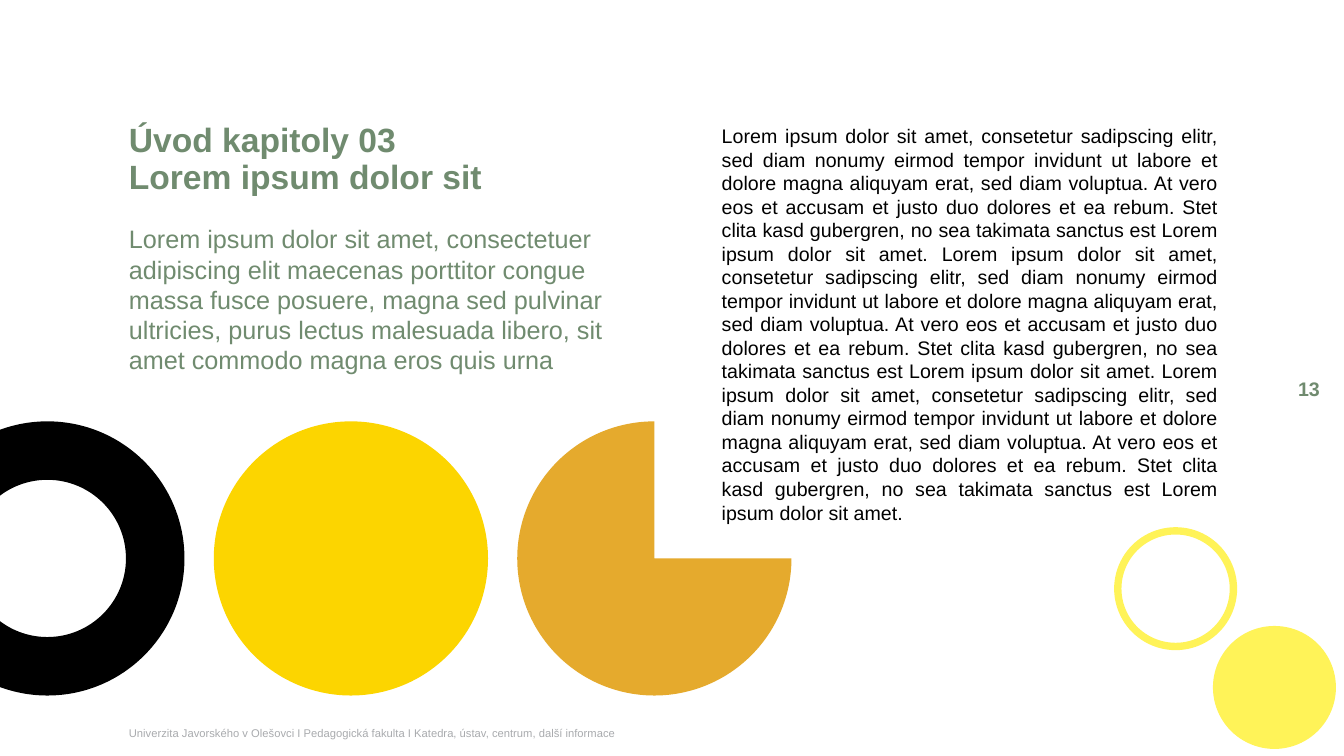
from itertools import pairwise
from math import acos, cos, pi, sin, tan

from pptx import Presentation
from pptx.dml.color import RGBColor
from pptx.enum.shapes import MSO_SHAPE
from pptx.enum.text import MSO_ANCHOR, PP_ALIGN
from pptx.oxml.ns import qn
from pptx.oxml.xmlchemy import OxmlElement
from pptx.util import Inches, Pt

BLACK = RGBColor(0x00, 0x00, 0x00)
GREEN = RGBColor(0x70, 0x8B, 0x6F)
GREY = RGBColor(0xA9, 0xAB, 0xAE)
YELLOW = RGBColor(0xFC, 0xD5, 0x00)
OCHRE = RGBColor(0xE5, 0xAA, 0x2D)
LEMON = RGBColor(0xFF, 0xF3, 0x58)

TITLE = "Úvod kapitoly 03\vLorem ipsum dolor sit"
LEAD = (
    "Lorem ipsum dolor sit amet, consectetuer adipiscing elit maecenas "
    "porttitor congue massa fusce posuere, magna sed pulvinar ultricies, "
    "purus lectus malesuada libero, sit amet commodo magna eros quis urna"
)
PASSAGE = (
    "Lorem ipsum dolor sit amet, consetetur sadipscing elitr, sed diam nonumy "
    "eirmod tempor invidunt ut labore et dolore magna aliquyam erat, sed diam "
    "voluptua. At vero eos et accusam et justo duo dolores et ea rebum. Stet "
    "clita kasd gubergren, no sea takimata sanctus est Lorem ipsum dolor sit amet."
)
FOOTER = (
    "Univerzita Javorského v Olešovci I Pedagogická fakulta I "
    "Katedra, ústav, centrum, další informace"
)


def add_text(page, box, text, font, paragraph=None, frame=None):
    text_frame = page.shapes.add_textbox(*map(Inches, box)).text_frame
    para = text_frame.paragraphs[0]
    para.text = text
    color = font.pop("color")
    for target, values in (
        (text_frame, {"word_wrap": True, **(frame or {})}),
        (para, paragraph or {}),
        (para.font, {"name": "Arial", **font}),
    ):
        for name, value in values.items():
            setattr(target, name, value)
    para.font.color.rgb = color


def paint(shape, color):
    shape.shadow.inherit = False
    shape.fill.solid()
    shape.fill.fore_color.rgb = color
    shape.line.fill.background()


def add_round(group, kind, left, top, size, color):
    shape = group.shapes.add_shape(kind, *map(Inches, (left, top, size, size)))
    paint(shape, color)
    return shape


def clipped_arc(center_x, center_y, radius):
    def place(angle, pull=0):
        return (
            Inches(center_x + radius * (cos(angle) - pull * sin(angle))),
            Inches(center_y + radius * (sin(angle) + pull * cos(angle))),
        )

    limit = acos(-center_x / radius)
    angles = (-limit, -pi / 2, 0, pi / 2, limit)
    points = [place(-limit)]
    for start, end in pairwise(angles):
        pull = 4 / 3 * tan((end - start) / 4)
        points += [place(start, pull), place(end, -pull), place(end)]
    return points


def bend(lines):
    for first, second, third in zip(*[iter(lines)] * 3):
        curve = OxmlElement("a:cubicBezTo")
        first.addprevious(curve)
        for line in (first, second, third):
            curve.append(line[0])
            line.getparent().remove(line)


def add_clipped_ring(group, center_x, center_y, outer, inner, color):
    outside = clipped_arc(center_x, center_y, outer)
    inside = clipped_arc(center_x, center_y, inner)[::-1]
    builder = group.shapes.build_freeform(*outside[0])
    builder.add_line_segments(outside[1:] + inside, close=True)
    ring = builder.convert_to_shape()
    paint(ring, color)
    lines = list(ring.element.iter(qn("a:lnTo")))
    joint = len(outside) - 1
    bend(lines[:joint])
    bend(lines[joint + 1:])


def add_large_circles(page, left, top, size, pitch):
    group = page.shapes.add_group_shape()
    radius = size / 2
    add_clipped_ring(group, left + radius, top + radius, radius, 0.78, BLACK)
    add_round(group, MSO_SHAPE.OVAL, left + pitch, top, size, YELLOW)
    add_round(group, MSO_SHAPE.PIE, left + 2 * pitch, top, size, OCHRE)


def add_small_circles(page, left, top, size, offset):
    group = page.shapes.add_group_shape()
    add_round(group, MSO_SHAPE.OVAL, left + offset, top + offset, size, LEMON)
    ring = add_round(group, MSO_SHAPE.DONUT, left, top, size, LEMON)
    ring.adjustments[0] = 0.06


def add_chapter(page, left, top, width):
    add_text(page, (left, top, width, 0.83), TITLE,
             {"size": Pt(24), "bold": True, "color": GREEN}, {"line_spacing": 0.9})
    add_text(page, (left, top + 0.99, width, 1.62), LEAD,
             {"size": Pt(18), "color": GREEN}, {"space_before": Pt(3)})


def add_passage(page, left, top, width):
    add_text(page, (left, top, width, 4.11), " ".join([PASSAGE] * 3),
             {"size": Pt(14), "color": BLACK},
             {"alignment": PP_ALIGN.JUSTIFY, "space_before": Pt(3)})


def add_footer(page):
    middle = {"vertical_anchor": MSO_ANCHOR.MIDDLE}
    add_text(page, (1.18, 7.15, 5.49, 0.24), FOOTER,
             {"size": Pt(8), "color": GREY}, frame=middle)
    add_text(page, (12.75, 3.69, 0.44, 0.34), "13",
             {"size": Pt(14), "bold": True, "color": GREEN},
             {"alignment": PP_ALIGN.RIGHT}, {**middle, "word_wrap": False})


def main():
    deck = Presentation()
    deck.slide_width, deck.slide_height = Inches(13.33), Inches(7.5)
    page = deck.slides.add_slide(deck.slide_layouts[6])
    add_large_circles(page, -0.89, 4.18, 2.72, 3.01)
    add_small_circles(page, 11.05, 5.23, 1.22, 0.98)
    add_chapter(page, 1.18, 1.18, 5.12)
    add_footer(page)
    add_passage(page, 7.06, 1.18, 5.12)
    deck.save("out.pptx")


if __name__ == "__main__":
    main()
